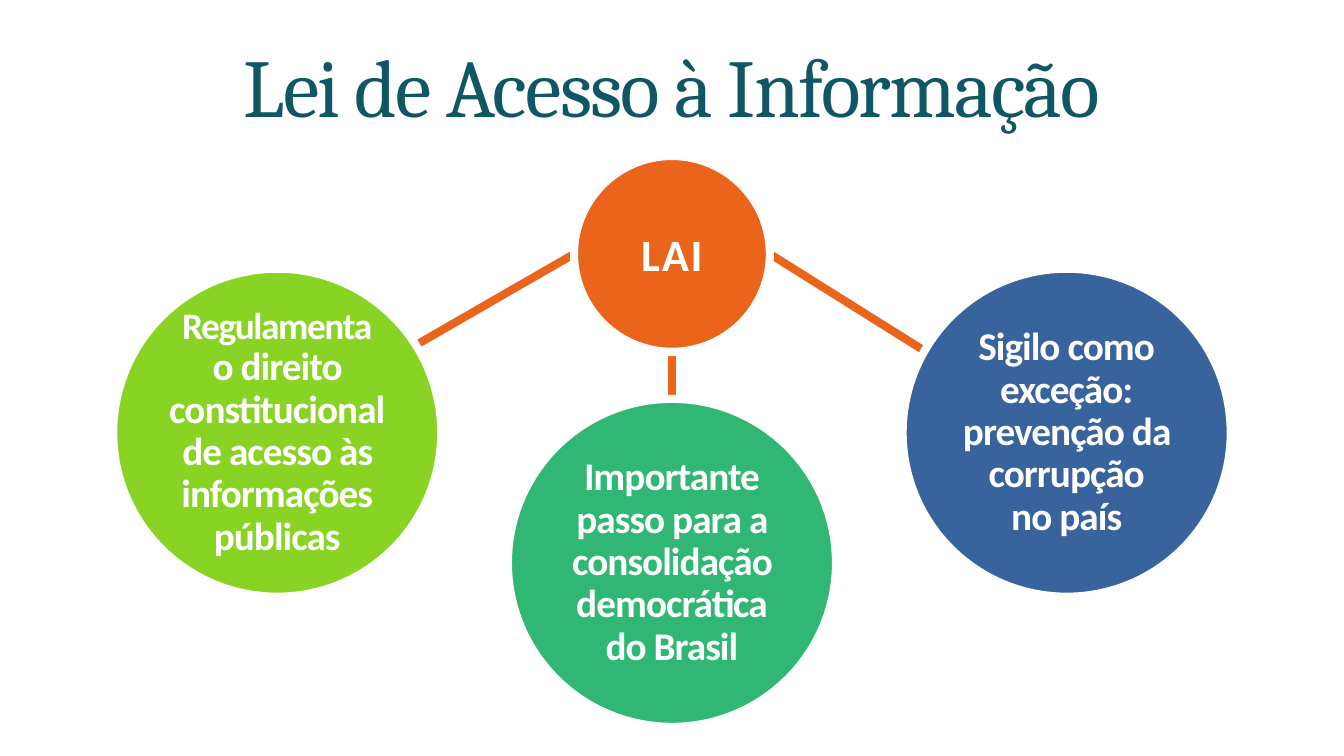
from dataclasses import dataclass

from lxml import etree
from pptx import Presentation
from pptx import util as u
from pptx.dml.color import RGBColor
from pptx.enum import shapes, text
from pptx.oxml import ns


@dataclass(frozen=True)
class Font:
    name: str
    size: float
    color: str
    bold: bool
    space: float


@dataclass(frozen=True)
class Theme:
    paper: str = "FFFFFF"
    orange: str = "EB641B"
    lime: str = "88D323"
    green: str = "2FB773"
    blue: str = "39639D"
    stroke: float = 4.33
    inset: float = 0.1
    title: Font = Font("Cambria", 44, "105766", False, -1)
    hub: Font = Font("Calibri", 24, "FFFFFF", True, 1)
    body: Font = Font("Calibri", 21, "FFFFFF", True, -0.5)
    tight: Font = Font("Calibri", 20, "FFFFFF", True, -0.8)


@dataclass(frozen=True)
class Disc:
    x: float
    y: float
    width: float
    fill: str
    words: str
    fonts: tuple[Font, ...]
    leading: float = 0.9


@dataclass(frozen=True)
class Spoke:
    x1: float
    y1: float
    x2: float
    y2: float


THEME = Theme()
MID, STEP = 12.7, 7.46
BIG, SMALL = 6.2, 3.7
HUB_Y, SIDE_Y, LOW_Y = 4.8, 8.18, 10.64
EDGE = SMALL / 2

SPOKES = (
    Spoke(MID + EDGE, HUB_Y, 17.5, 6.65),
    Spoke(MID, HUB_Y + EDGE, MID, 7.95),
    Spoke(7.9, 6.5, MID - EDGE, HUB_Y),
)

DISCS = (
    Disc(MID, HUB_Y, SMALL, THEME.orange, "LAI", (THEME.hub,), 1.0),
    Disc(MID, LOW_Y, BIG, THEME.green,
         "Importante\vpasso para a consolidação democrática\vdo Brasil",
         (THEME.body,)),
    Disc(MID - STEP, SIDE_Y, BIG, THEME.lime,
         "Regulamenta\vo direito constitucional\v"
         "de acesso às informações\vpúblicas",
         (THEME.tight, THEME.body)),
    Disc(MID + STEP, SIDE_Y, BIG, THEME.blue,
         "Sigilo como\vexceção:\vprevenção da corrupção\vno país",
         (THEME.body,)),
)


def write(shape, words: str, fonts: tuple[Font, ...], leading: float) -> None:
    frame = shape.text_frame
    frame.word_wrap = True
    frame.vertical_anchor = text.MSO_ANCHOR.MIDDLE
    frame.margin_left = frame.margin_right = u.Cm(THEME.inset)
    frame.margin_top = frame.margin_bottom = u.Cm(THEME.inset)
    para = frame.paragraphs[0]
    para.text = words
    para.alignment = text.PP_ALIGN.CENTER
    para.line_spacing = leading
    for i, run in enumerate(para.runs):
        font = fonts[min(i, len(fonts) - 1)]
        run.font.name = font.name
        run.font.size = u.Pt(font.size)
        run.font.bold = font.bold
        run.font.color.rgb = RGBColor.from_string(font.color)
        run._r.get_or_add_rPr().set("spc", str(round(font.space * 100)))


def draw_spoke(slide, spoke: Spoke) -> None:
    ends = (u.Cm(v) for v in (spoke.x1, spoke.y1, spoke.x2, spoke.y2))
    line = slide.shapes.add_connector(shapes.MSO_CONNECTOR.STRAIGHT, *ends)
    line.line.color.rgb = RGBColor.from_string(THEME.orange)
    line.line.width = u.Pt(THEME.stroke)
    etree.SubElement(line._element.spPr, ns.qn("a:effectLst"))


def draw_disc(slide, disc: Disc) -> None:
    half = disc.width / 2
    shape = slide.shapes.add_shape(
        shapes.MSO_SHAPE.OVAL, u.Cm(disc.x - half), u.Cm(disc.y - half),
        u.Cm(disc.width), u.Cm(disc.width))
    shape.shadow.inherit = False
    shape.fill.solid()
    shape.fill.fore_color.rgb = RGBColor.from_string(disc.fill)
    shape.line.color.rgb = RGBColor.from_string(THEME.paper)
    shape.line.width = u.Pt(THEME.stroke)
    write(shape, disc.words, disc.fonts, disc.leading)


def main() -> None:
    deck = Presentation()
    deck.slide_width, deck.slide_height = u.Cm(25.4), u.Cm(14.29)
    slide = deck.slides.add_slide(deck.slide_layouts[6])
    slide.background.fill.solid()
    slide.background.fill.fore_color.rgb = RGBColor.from_string(THEME.paper)
    for spoke in SPOKES:
        draw_spoke(slide, spoke)
    for disc in DISCS:
        draw_disc(slide, disc)
    title = slide.shapes.add_textbox(
        u.Cm(0.5), u.Cm(0.58), u.Cm(24.4), u.Cm(2.4))
    write(title, "Lei de Acesso à Informação", (THEME.title,), 0.8)
    deck.save("out.pptx")


if __name__ == "__main__":
    main()
